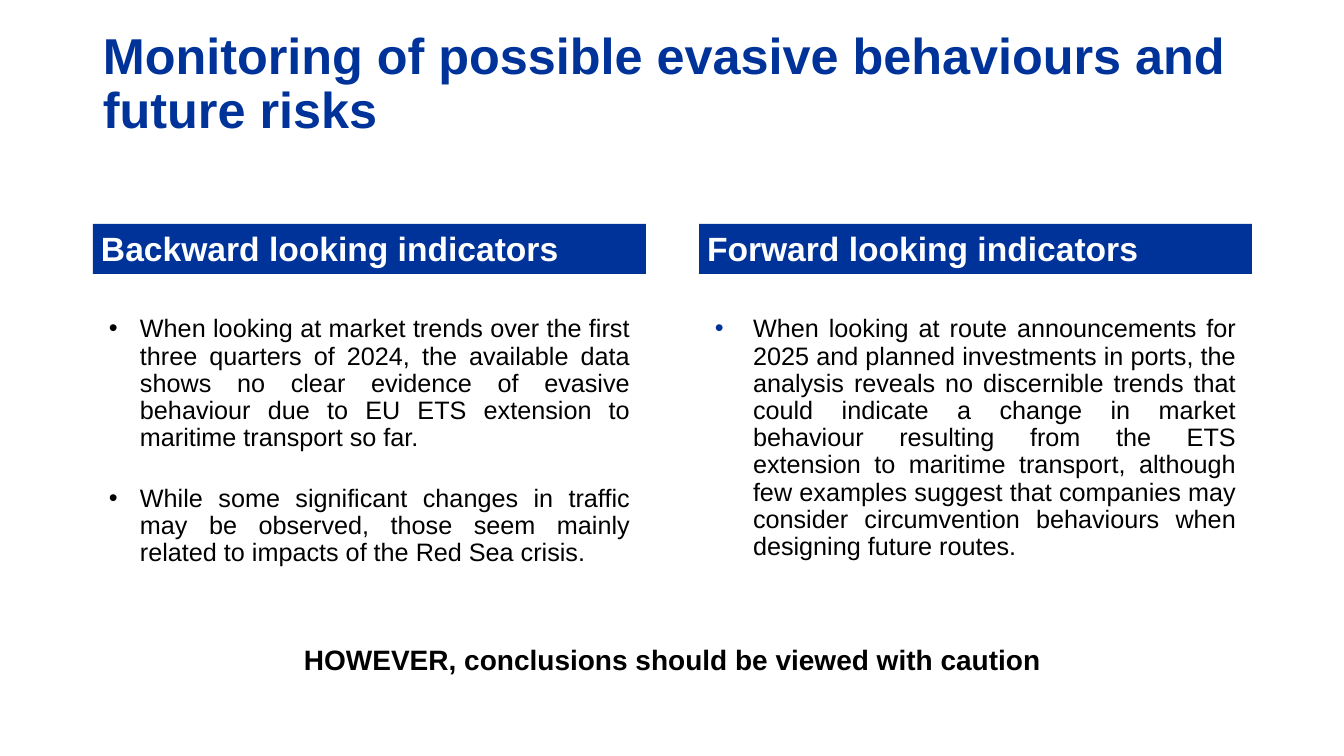
import pptx
import pptx.dml.color
import pptx.enum.text
import pptx.oxml.xmlchemy
import pptx.util
from lxml import etree

SCALE = 914400 / 100.8
FONT = "Arial"
COLOURS = {"blue": "003399", "white": "FFFFFF", "black": "000000"}
ALIGN = pptx.enum.text.PP_ALIGN
ANCHOR = pptx.enum.text.MSO_ANCHOR

COLUMNS = [
    {
        "heading": "Backward looking indicators",
        "points": [
            "When looking at market trends over the first three quarters of 2024, the available data "
            "shows no clear evidence of evasive behaviour due to EU ETS extension to maritime "
            "transport so far.",
            "While some significant changes in traffic may be observed, those seem mainly related to "
            "impacts of the Red Sea crisis.",
        ],
        "indent": 31,
        "bullet": "black",
        "height": 245,
    },
    {
        "heading": "Forward looking indicators",
        "points": [
            "When looking at route announcements for 2025 and planned investments in ports, the "
            "analysis reveals no discernible trends that could indicate a change in market behaviour "
            "resulting from the ETS extension to maritime transport, although few examples suggest "
            "that companies may consider circumvention behaviours when designing future routes.",
        ],
        "indent": 38,
        "bullet": "blue",
        "height": 279,
    },
]


def px(length):
    return pptx.util.Emu(round(length * SCALE))


def rgb(name):
    return pptx.dml.color.RGBColor.from_string(COLOURS[name])


def place(shape, box):
    shape.left, shape.top, shape.width, shape.height = map(px, box)


def prepare_frame(shape, anchor, inset_x, inset_y):
    frame = shape.text_frame
    frame.word_wrap = True
    frame.auto_size = pptx.enum.text.MSO_AUTO_SIZE.NONE
    frame.vertical_anchor = anchor
    frame.margin_left = frame.margin_right = px(inset_x)
    frame.margin_top = frame.margin_bottom = px(inset_y)
    return frame


def format_para(para, size, colour, bold, align=ALIGN.LEFT, spacing=0.9):
    para.alignment = align
    para.line_spacing = spacing
    para.space_before = para.space_after = pptx.util.Pt(0)
    para.font.name = FONT
    para.font.size = pptx.util.Pt(size)
    para.font.bold = bold
    para.font.color.rgb = rgb(colour)


def add_bullet(para, indent, colour):
    properties = para._p.get_or_add_pPr()
    properties.set("marL", str(px(indent)))
    properties.set("indent", str(-px(indent)))
    namespace = pptx.oxml.ns.qn
    bullet_colour = etree.SubElement(properties, namespace("a:buClr"))
    etree.SubElement(bullet_colour, namespace("a:srgbClr"), val=COLOURS[colour])
    etree.SubElement(properties, namespace("a:buFont"), typeface=FONT)
    etree.SubElement(properties, namespace("a:buChar"), char="•")


def fill_title(title, box):
    place(title, box)
    frame = prepare_frame(title, ANCHOR.MIDDLE, 10, 5)
    frame.text = "Monitoring of possible evasive behaviours and future risks"
    format_para(frame.paragraphs[0], 36, "blue", True)


def fill_column(heading, body, column, box):
    left, top, width = box
    place(heading, (left, top, width, 50))
    heading.fill.solid()
    heading.fill.fore_color.rgb = rgb("blue")
    frame = prepare_frame(heading, ANCHOR.TOP, 8, 8)
    frame.text = column["heading"]
    format_para(frame.paragraphs[0], 24, "white", True)

    place(body, (left, top + 76, width, column["height"]))
    frame = prepare_frame(body, ANCHOR.TOP, 16, 16)
    frame.text = "\n".join(column["points"])
    for number, para in enumerate(frame.paragraphs):
        add_bullet(para, column["indent"], column["bullet"])
        format_para(para, 18, "black", False, ALIGN.JUSTIFY)
        para.space_before = pptx.util.Pt(12 if number else 0)
        para.space_after = pptx.util.Pt(12)


def add_conclusion(page, box):
    conclusion = page.shapes.add_textbox(*map(px, box))
    frame = prepare_frame(conclusion, ANCHOR.TOP, 10, 5)
    frame.text = "HOWEVER, conclusions should be viewed with caution"
    format_para(frame.paragraphs[0], 20, "black", True, ALIGN.CENTER, 1.0)


def main():
    deck = pptx.Presentation()
    deck.slide_width, deck.slide_height = px(1344), px(756)
    page = deck.slides.add_slide(deck.slide_layouts.get_by_name("Comparison"))
    holders = {holder.placeholder_format.idx: holder for holder in page.placeholders}
    fill_title(page.shapes.title, (93, 40, 1159, 90))
    for number, column in enumerate(COLUMNS):
        heading, body = holders[2 * number + 1], holders[2 * number + 2]
        fill_column(heading, body, column, (93 + 606 * number, 224, 553))
    add_conclusion(page, (259, 637, 827, 44))
    deck.save("out.pptx")


if __name__ == "__main__":
    main()
